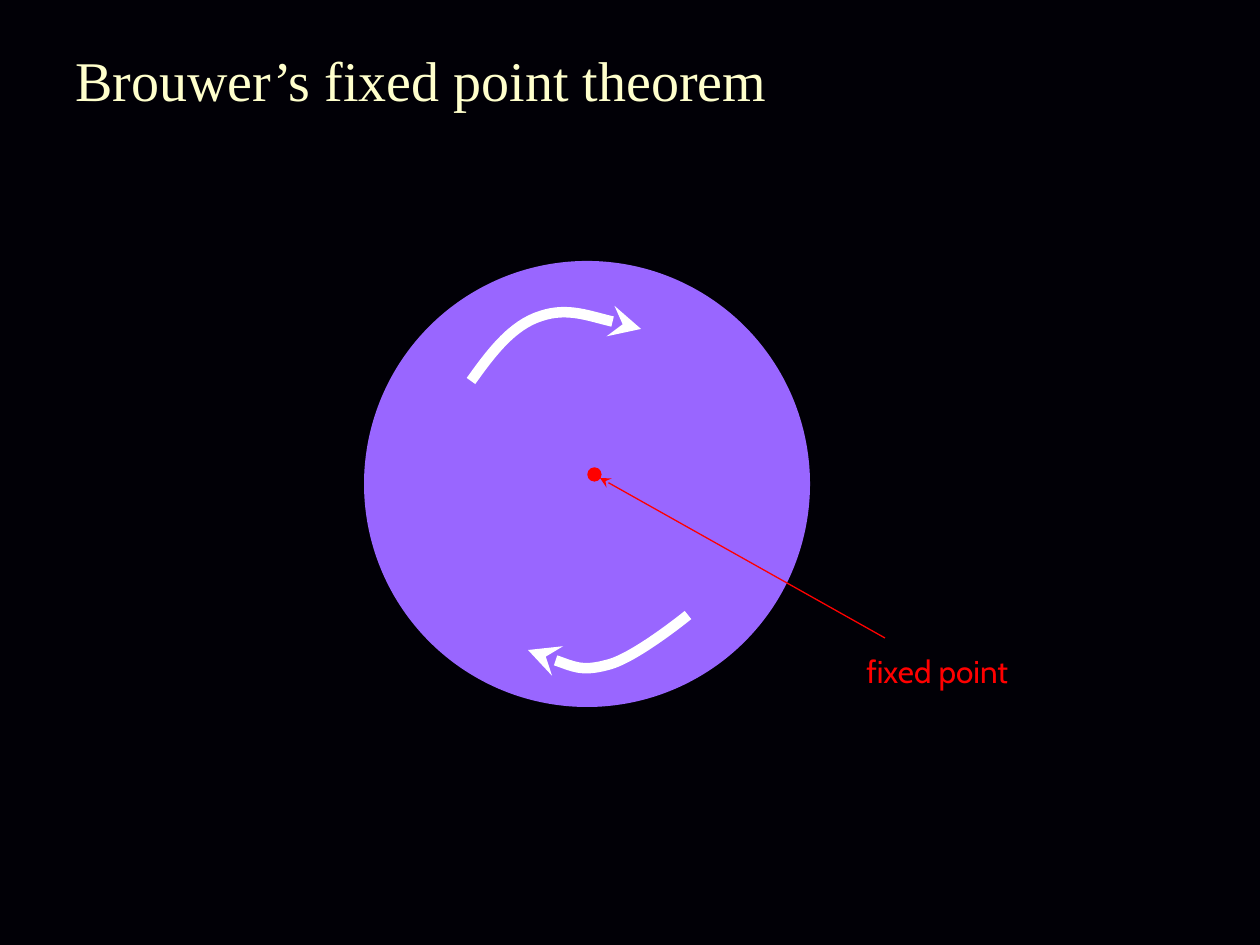
from pptx import Presentation
from pptx.dml.color import RGBColor
from pptx.enum.shapes import MSO_CONNECTOR, MSO_SHAPE
from pptx.enum.text import MSO_ANCHOR
from pptx.oxml.ns import qn
from pptx.util import Pt
from lxml.etree import SubElement

SCALE = 914400 / 126  # EMU per px
COLORS = {"night": "010006", "cream": "FFFFCC", "disk": "9966FF",
          "white": "FFFFFF", "red": "FF0000"}


def emu(*lengths):
    return [round(length * SCALE) for length in lengths]


def style_line(line, color, width, arrow_end=None):
    line.color.rgb = RGBColor.from_string(COLORS[color])
    line.width = Pt(width)
    if arrow_end:
        SubElement(line._get_or_add_ln(), qn(f"a:{arrow_end}"), type="stealth")


prs = Presentation()
prs.slide_width, prs.slide_height = emu(1260, 945)
slide = prs.slides.add_slide(prs.slide_layouts[6])
shapes = slide.shapes
slide.background.fill.solid()
slide.background.fill.fore_color.rgb = RGBColor.from_string(COLORS["night"])

# Disk
disk = shapes.add_shape(MSO_SHAPE.OVAL, *emu(364, 261, 446, 446))
disk.shadow.inherit = False
disk.fill.solid()
disk.fill.fore_color.rgb = RGBColor.from_string(COLORS["disk"])
disk.line.fill.background()

# Rotation arrows: a start point, then three Bézier points per curve
rotations = [
    ("tailEnd", [(471, 381), (491, 353), (512, 325), (541, 316),
                 (568, 307), (641, 329), (641, 329)]),
    ("headEnd", [(528, 650), (554, 660), (581, 672), (607, 665),
                 (634, 659), (688, 615), (688, 615)]),
]
for arrow_end, (start, *controls) in rotations:
    builder = shapes.build_freeform(*start, scale=SCALE)
    builder.add_line_segments(controls, close=False)
    rotation = builder.convert_to_shape()
    rotation.shadow.inherit = False
    rotation.fill.background()
    style_line(rotation.line, "white", 6, arrow_end)
    segments = list(rotation._element.iter(qn("a:lnTo")))
    outline = segments[0].getparent()
    for first in range(0, len(segments), 3):
        curve = SubElement(outline, qn("a:cubicBezTo"))
        for segment in segments[first:first + 3]:
            curve.append(segment[0])
            outline.remove(segment)

# Pointer to the fixed point
pointer = shapes.add_connector(MSO_CONNECTOR.STRAIGHT, *emu(600, 478, 885, 638))
style_line(pointer.line, "red", 0.75, "headEnd")
SubElement(pointer._element.spPr, qn("a:effectLst"))

# Fixed point
fixed_point = shapes.add_shape(MSO_SHAPE.OVAL, *emu(588, 468, 13, 13))
fixed_point.shadow.inherit = False
fixed_point.fill.solid()
fixed_point.fill.fore_color.rgb = RGBColor.from_string(COLORS["red"])
style_line(fixed_point.line, "red", 0.75)

# Title and label
texts = [
    ("Brouwer’s fixed point theorem", (63, 0, 822, 158),
     "Times New Roman", 32, "cream", MSO_ANCHOR.MIDDLE, True),
    ("fixed point", (854, 646, 173, 50), "Cabin", 18, "red", MSO_ANCHOR.TOP, False),
]
for wording, place, font, size, color, anchor, wrap in texts:
    frame = shapes.add_textbox(*emu(*place)).text_frame
    frame.word_wrap = wrap
    frame.vertical_anchor = anchor
    run = frame.paragraphs[0].add_run()
    run.text = wording
    run.font.name = font
    run.font.size = Pt(size)
    run.font.color.rgb = RGBColor.from_string(COLORS[color])

prs.save("out.pptx")
